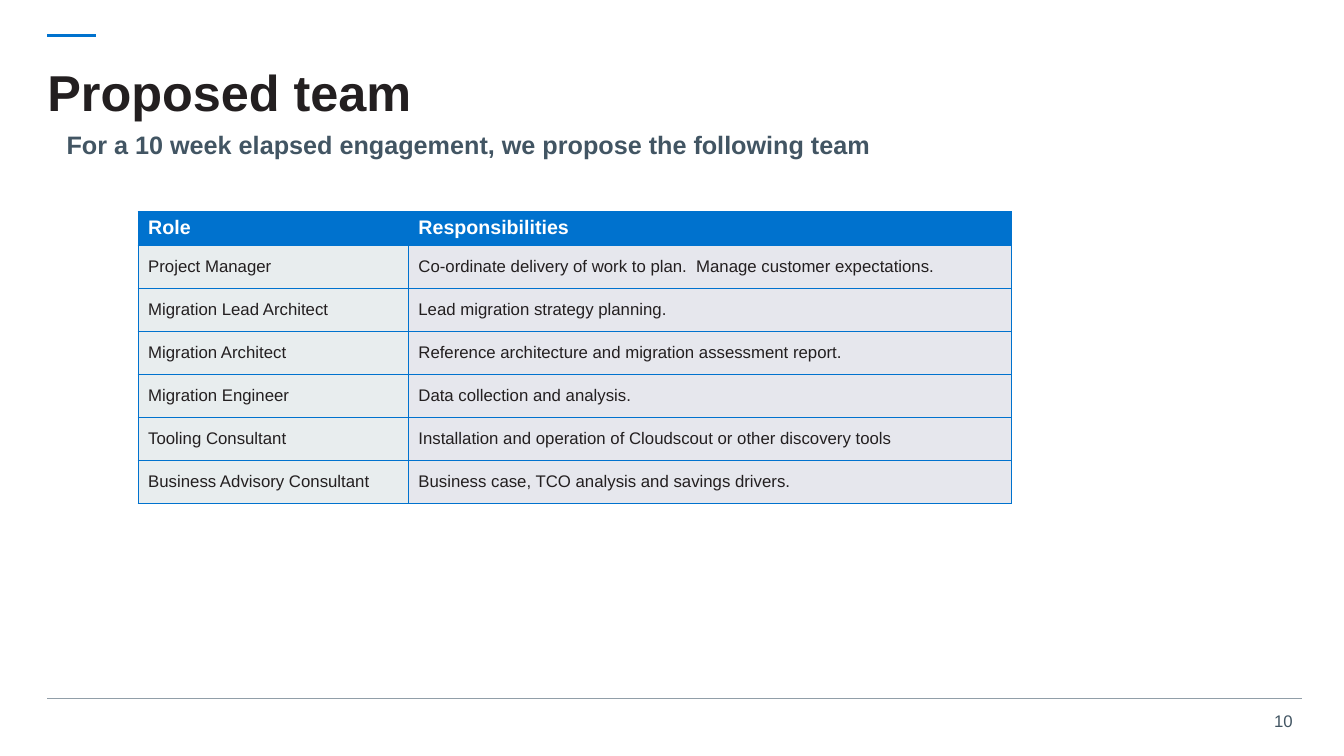
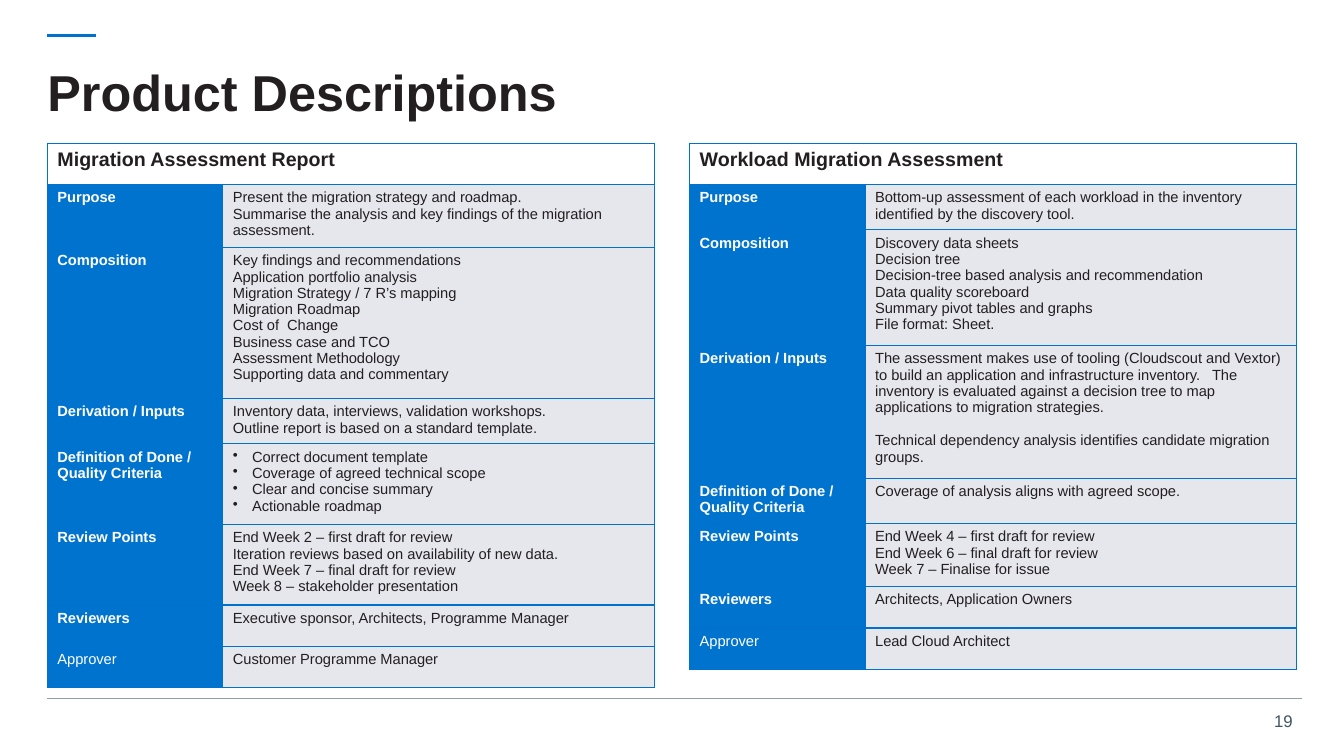
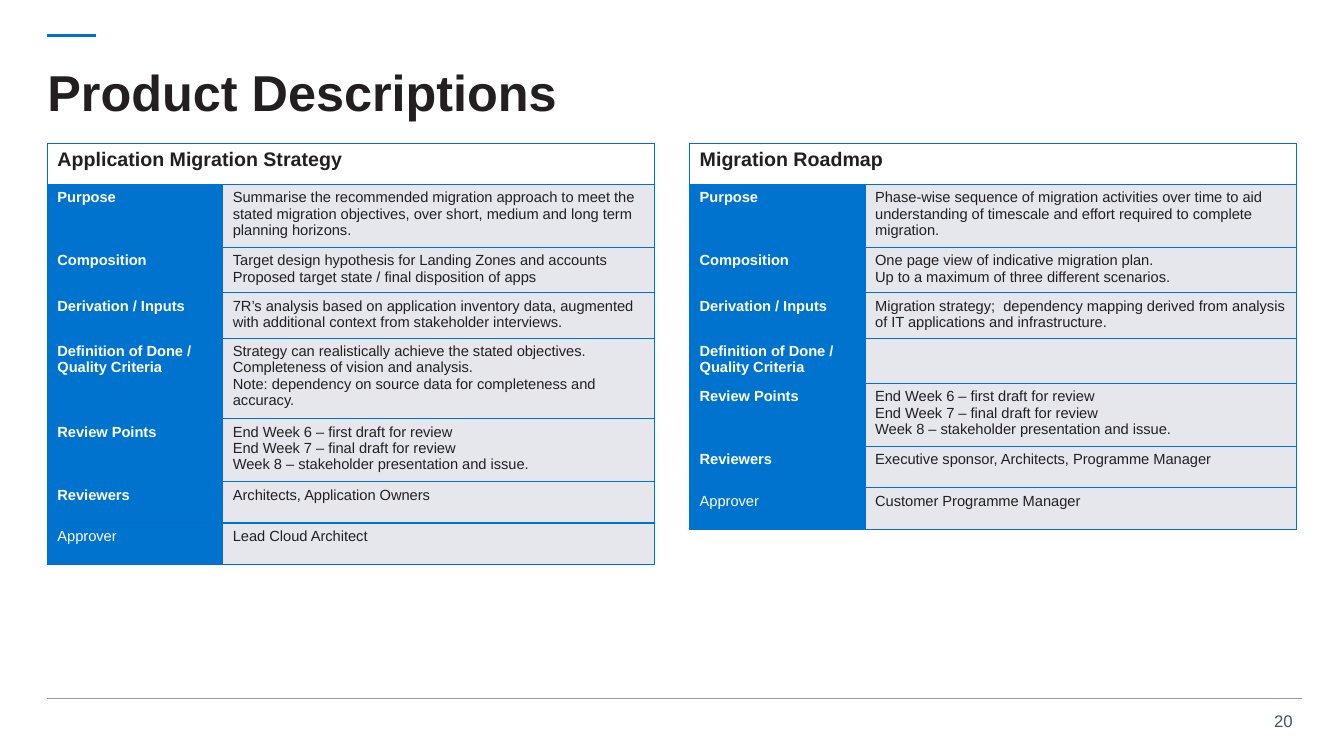
from lxml import etree
from pptx import Presentation
from pptx.dml.color import RGBColor
from pptx.enum.shapes import MSO_CONNECTOR
from pptx.enum.text import MSO_ANCHOR, MSO_AUTO_SIZE, PP_ALIGN
from pptx.oxml.ns import qn
from pptx.util import Inches, Pt

STRAIGHT = MSO_CONNECTOR.STRAIGHT
TOP, MIDDLE = MSO_ANCHOR.TOP, MSO_ANCHOR.MIDDLE
LEFT, RIGHT = PP_ALIGN.LEFT, PP_ALIGN.RIGHT
NO_FIT = MSO_AUTO_SIZE.NONE

COLORS = {
    "blue": "0072CE",
    "label": "0073CF",
    "ink": "231F20",
    "slate": "425563",
    "rule": "919EA8",
    "role": "E8EDEE",
    "detail": "E6E7ED",
    "white": "FFFFFF",
}
FONT = "Arial"
SLIDE_W, SLIDE_H = 13.33, 7.5
MARGIN = 0.47
RIGHT_EDGE = 12.91
INDENT = 0.19

PRODUCT_COLUMNS = (1.74, 4.28)
PRODUCT_TOP = 1.42
PRODUCT_GAP = 0.35
PRODUCT_ROW = 0.41
PRODUCT_LABELS = (
    "Purpose",
    "Composition",
    "Derivation / Inputs",
    "Definition of Done / Quality Criteria",
    "Review Points",
    "Reviewers",
    "Approver",
)

TEAM = (
    ("Project Manager",
     "Co-ordinate delivery of work to plan.  Manage customer expectations."),
    ("Migration Lead Architect", "Lead migration strategy planning."),
    ("Migration Architect",
     "Reference architecture and migration assessment report."),
    ("Migration Engineer", "Data collection and analysis."),
    ("Tooling Consultant",
     "Installation and operation of Cloudscout or other discovery tools"),
    ("Business Advisory Consultant",
     "Business case, TCO analysis and savings drivers."),
)

# Each product lists its details in the order of PRODUCT_LABELS.
ASSESSMENT_REPORT = ("Migration Assessment Report", (
    ("Present the migration strategy and roadmap.",
     "Summarise the analysis and key findings of the migration assessment."),
    ("Key findings and recommendations",
     "Application portfolio analysis",
     "Migration Strategy / 7 R’s mapping",
     "Migration Roadmap",
     "Cost of  Change",
     "Business case and TCO",
     "Assessment Methodology",
     "Supporting data and commentary"),
    ("Inventory data, interviews, validation workshops.",
     "Outline report is based on a standard template."),
    ("• Correct document template",
     "• Coverage of agreed technical scope",
     "• Clear and concise summary",
     "• Actionable roadmap"),
    ("End Week 2 – first draft for review",
     "Iteration reviews based on availability of new data.",
     "End Week 7 – final draft for review",
     "Week 8 – stakeholder presentation"),
    ("Executive sponsor, Architects, Programme Manager",),
    ("Customer Programme Manager",),
))
WORKLOAD_ASSESSMENT = ("Workload Migration Assessment", (
    ("Bottom-up assessment of each workload in the inventory identified by "
     "the discovery tool.",),
    ("Discovery data sheets",
     "Decision tree",
     "Decision-tree based analysis and recommendation",
     "Data quality scoreboard",
     "Summary pivot tables and graphs",
     "File format: Sheet."),
    ("The assessment makes use of tooling (Cloudscout and Vextor) to build "
     "an application and infrastructure inventory.   The inventory is "
     "evaluated against a decision tree to map applications to migration "
     "strategies.",
     "Technical dependency analysis identifies candidate migration groups."),
    ("Coverage of analysis aligns with agreed scope.",),
    ("End Week 4 – first draft for review",
     "End Week 6 – final draft for review",
     "Week 7 – Finalise for issue"),
    ("Architects, Application Owners",),
    ("Lead Cloud Architect",),
))
MIGRATION_STRATEGY = ("Application Migration Strategy", (
    ("Summarise the recommended migration approach to meet the stated "
     "migration objectives, over short, medium and long term planning "
     "horizons.",),
    ("Target design hypothesis for Landing Zones and accounts",
     "Proposed target state / final disposition of apps"),
    ("7R’s analysis based on application inventory data, augmented with "
     "additional context from stakeholder interviews.",),
    ("Strategy can realistically achieve the stated objectives.",
     "Completeness of vision and analysis.",
     "Note: dependency on source data for completeness and accuracy."),
    ("End Week 6 – first draft for review",
     "End Week 7 – final draft for review",
     "Week 8 – stakeholder presentation and issue."),
    ("Architects, Application Owners",),
    ("Lead Cloud Architect",),
))
MIGRATION_ROADMAP = ("Migration Roadmap", (
    ("Phase-wise sequence of migration activities over time to aid "
     "understanding of timescale and effort required to complete "
     "migration.",),
    ("One page view of indicative migration plan.",
     "Up to a maximum of three different scenarios."),
    ("Migration strategy;  dependency mapping derived from analysis of IT "
     "applications and infrastructure.",),
    (),
    ("End Week 6 – first draft for review",
     "End Week 7 – final draft for review",
     "Week 8 – stakeholder presentation and issue."),
    ("Executive sponsor, Architects, Programme Manager",),
    ("Customer Programme Manager",),
))


def rgb(name):
    return RGBColor.from_string(COLORS[name])


def write(frame, lines, size, color="ink", bold=False, align=LEFT,
          spacing=None, indent=0, gap=0):
    """Fill a text frame; a line that starts with "• " becomes a bullet."""
    for index, line in enumerate(lines):
        para = frame.add_paragraph() if index else frame.paragraphs[0]
        para.alignment = align
        if spacing:
            para.line_spacing = spacing
        if index and gap:
            para.space_before = Pt(gap)
        bulleted = line.startswith("• ")
        if indent or bulleted:
            props = para._p.get_or_add_pPr()
            props.set("marL", str(Inches(indent or INDENT)))
            props.set("indent", str(-Inches(INDENT) if bulleted else 0))
            if bulleted:
                etree.SubElement(props, qn("a:buChar")).set("char", "•")
        run = para.add_run()
        run.text = line.removeprefix("• ")
        run.font.name = FONT
        run.font.size = Pt(size)
        run.font.bold = bold
        run.font.color.rgb = rgb(color)


def add_text(slide, box, lines, inset=0, **style):
    frame = slide.shapes.add_textbox(*map(Inches, box)).text_frame
    frame.word_wrap = True
    frame.margin_left = frame.margin_right = Inches(inset)
    frame.margin_top = frame.margin_bottom = Inches(inset / 2)
    write(frame, lines, **style)


def add_rule(slide, y, right, color, width):
    ends = map(Inches, (MARGIN, y, right, y))
    rule = slide.shapes.add_connector(STRAIGHT, *ends)
    rule.line.color.rgb = rgb(color)
    rule.line.width = Pt(width)
    etree.SubElement(rule._element.spPr, qn("a:effectLst"))


def border_cell(cell):
    props = cell._tc.get_or_add_tcPr()
    for index, side in enumerate(("lnL", "lnR", "lnT", "lnB")):
        line = etree.Element(qn(f"a:{side}"), w=str(Pt(1)))
        fill = etree.SubElement(line, qn("a:solidFill"))
        etree.SubElement(fill, qn("a:srgbClr")).set("val", COLORS["blue"])
        props.insert(index, line)


def fill_cell(cell, lines, fill, anchor=TOP, **style):
    cell.fill.solid()
    cell.fill.fore_color.rgb = rgb(fill)
    cell.vertical_anchor = anchor
    write(cell.text_frame, lines, **style)


def add_grid(slide, left, top, columns, rows):
    """Add a bordered table with the given column widths and row heights."""
    box = map(Inches, (left, top, sum(columns), sum(rows)))
    table = slide.shapes.add_table(len(rows), len(columns), *box).table
    table.first_row = table.horz_banding = False
    for column, width in zip(table.columns, columns):
        column.width = Inches(width)
    for row, height in zip(table.rows, rows):
        row.height = Inches(height)
    for cell in table.iter_cells():
        border_cell(cell)
    return table


def base_slide(deck, heading, number):
    """Add a slide with the shared title, rules and page number."""
    slide = deck.slides.add_slide(deck.slide_layouts[5])
    title = slide.shapes.title
    title.left, title.top = Inches(MARGIN), Inches(0.47)
    title.width, title.height = Inches(12.47), Inches(0.95)
    frame = title.text_frame
    frame.auto_size = NO_FIT
    frame.word_wrap = True
    frame.vertical_anchor = MIDDLE
    frame.margin_left = frame.margin_right = 0
    frame.margin_top = frame.margin_bottom = 0
    write(frame, [heading], size=36, bold=True, spacing=0.9)
    add_rule(slide, 0.35, 0.95, "blue", 2)
    add_rule(slide, 6.93, RIGHT_EDGE, "rule", 0.75)
    add_text(slide, (RIGHT_EDGE - 0.4, 7, 0.41, 0.3), [str(number)],
             inset=0.1, size=12, color="slate", align=RIGHT)
    return slide


def team_table(slide, left, top):
    header_height, role_height = 0.32, 2.56 / len(TEAM)
    table = add_grid(slide, left, top, (2.68, 5.98),
                     [header_height] + [role_height] * len(TEAM))
    for column, heading in enumerate(("Role", "Responsibilities")):
        fill_cell(table.cell(0, column), [heading], "blue",
                  size=14, color="white", bold=True)
    for row, entry in enumerate(TEAM, start=1):
        for column, fill in enumerate(("role", "detail")):
            fill_cell(table.cell(row, column), [entry[column]], fill,
                      anchor=MIDDLE, size=12)


def product_table(slide, left, top, product):
    name, details = product
    table = add_grid(slide, left, top, PRODUCT_COLUMNS,
                     [PRODUCT_ROW] * (len(PRODUCT_LABELS) + 1))
    table.cell(0, 0).merge(table.cell(0, 1))
    fill_cell(table.cell(0, 0), [name], "white", size=14, bold=True)
    for row, (label, lines) in enumerate(zip(PRODUCT_LABELS, details), 1):
        fill_cell(table.cell(row, 0), [label], "label", size=10.5,
                  color="white", bold=label != "Approver")
        spaced = label == "Derivation / Inputs" and len(lines[0]) > 100
        fill_cell(table.cell(row, 1), lines, "detail", size=10.5,
                  gap=12 if spaced else 0)


def team_slide(deck, number):
    slide = base_slide(deck, "Proposed team", number)
    add_text(slide, (MARGIN, 1.31, 12.09, 0.51),
             ["For a 10 week elapsed engagement, we propose the following "
              "team"],
             size=18, color="slate", bold=True, spacing=0.92, indent=INDENT)
    team_table(slide, 1.37, 2.1)


def product_slide(deck, number, products):
    slide = base_slide(deck, "Product Descriptions", number)
    pitch = sum(PRODUCT_COLUMNS) + PRODUCT_GAP
    for index, product in enumerate(products):
        product_table(slide, MARGIN + index * pitch, PRODUCT_TOP, product)


def main():
    deck = Presentation()
    deck.slide_width, deck.slide_height = Inches(SLIDE_W), Inches(SLIDE_H)
    team_slide(deck, 10)
    product_slide(deck, 19, (ASSESSMENT_REPORT, WORKLOAD_ASSESSMENT))
    product_slide(deck, 20, (MIGRATION_STRATEGY, MIGRATION_ROADMAP))
    deck.save("out.pptx")


if __name__ == "__main__":
    main()
